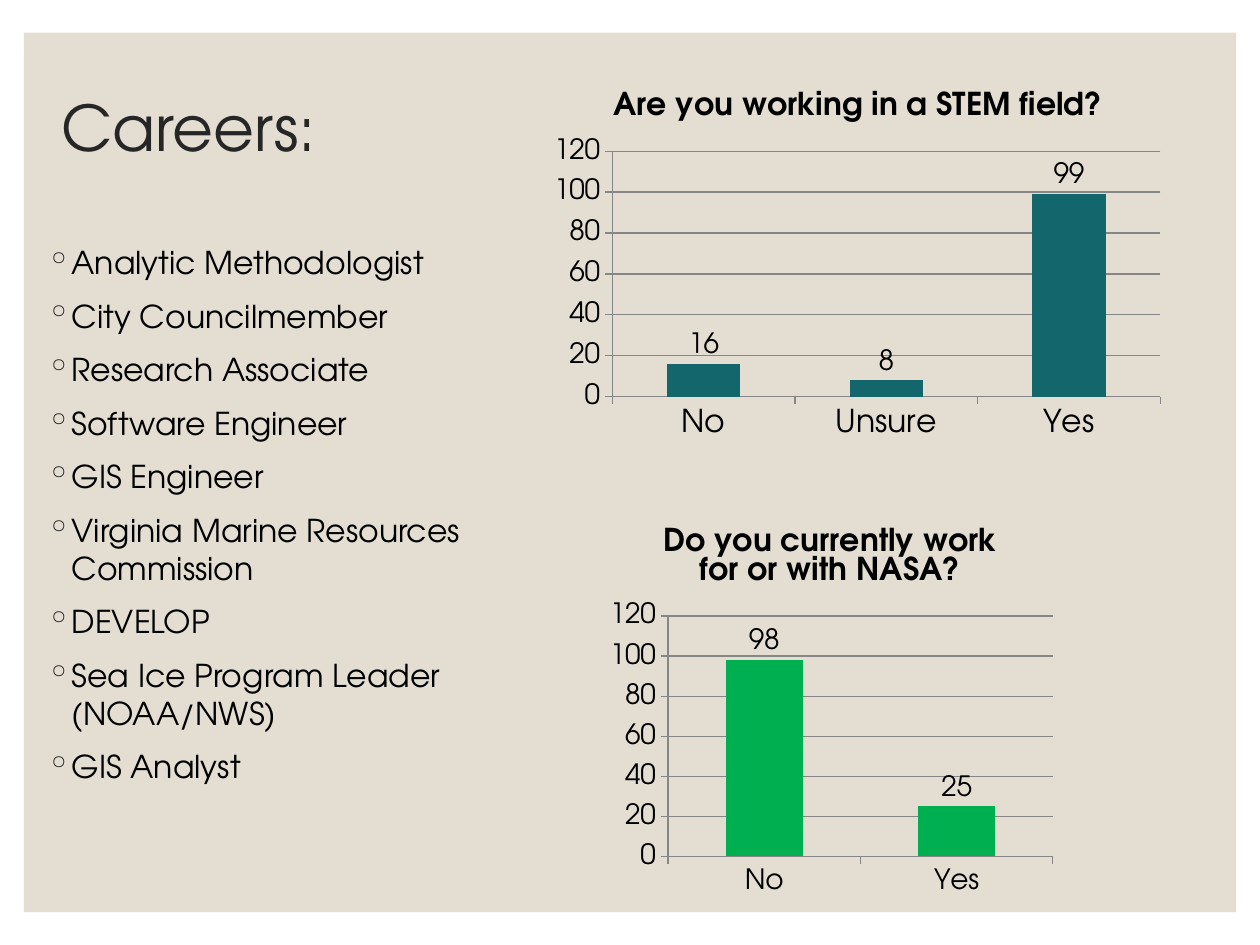
from lxml import etree
from pptx import Presentation
from pptx.chart.data import CategoryChartData
from pptx.dml.color import RGBColor
from pptx.enum.chart import XL_CHART_TYPE, XL_LABEL_POSITION, XL_TICK_MARK
from pptx.enum.shapes import MSO_SHAPE
from pptx.enum.text import MSO_ANCHOR
from pptx.oxml import parse_xml
from pptx.oxml.ns import nsdecls, qn
from pptx.util import Inches, Pt

FONT = "TeX Gyre Adventor"
BLACK = RGBColor(0x00, 0x00, 0x00)
CHARCOAL = RGBColor(0x26, 0x26, 0x26)
SAND = RGBColor(0xE3, 0xDE, 0xD1)
TEAL = RGBColor(0x13, 0x67, 0x6C)
GREEN = RGBColor(0x00, 0xB0, 0x50)
GRAY = RGBColor(0x86, 0x86, 0x86)

TITLE = "Careers:"
CAREERS = [
    "Analytic Methodologist",
    "City Councilmember",
    "Research Associate",
    "Software Engineer",
    "GIS Engineer",
    "Virginia Marine Resources Commission",
    "DEVELOP",
    "Sea Ice Program Leader (NOAA/NWS)",
    "GIS Analyst",
]
# "plot" holds the inner plot area as fractions of the chart: x, y, w, h
CHARTS = [
    {
        "title": "Are you working in a STEM field?",
        "box": (4.31, 0.54, 5, 3),
        "plot": (0.11, 0.22, 0.87, 0.65),
        "values": {"No": 16, "Unsure": 8, "Yes": 99},
        "color": TEAL,
        "category_size": 18,
    },
    {
        "title": "Do you currently work for or with NASA?",
        "box": (4.75, 4, 3.68, 3.18),
        "plot": (0.15, 0.28, 0.83, 0.6),
        "values": {"No": 98, "Yes": 25},
        "color": GREEN,
        "category_size": 16,
    },
]


def set_font(font, size, color=BLACK, bold=False):
    values = {"name": FONT, "size": Pt(size), "bold": bold}
    for name, value in values.items():
        setattr(font, name, value)
    font.color.rgb = color


def add_text(slide, box, lines, size, color, anchor=MSO_ANCHOR.TOP):
    frame = slide.shapes.add_textbox(*map(Inches, box)).text_frame
    frame.word_wrap = True
    frame.vertical_anchor = anchor
    frame.text = "\n".join(lines)
    for paragraph in frame.paragraphs:
        set_font(paragraph.runs[0].font, size, color)
    return frame.paragraphs


def add_bullet(paragraph):
    paragraph.space_before = Pt(9)
    properties = paragraph._p.get_or_add_pPr()
    properties.set("marL", str(Inches(0.2)))
    properties.set("indent", str(-Inches(0.2)))
    color = etree.SubElement(properties, qn("a:buClr"))
    etree.SubElement(color, qn("a:srgbClr"), val=str(CHARCOAL))
    etree.SubElement(properties, qn("a:buChar"), char="◦")


def place_plot(chart, fractions):
    """Fix the inner plot area, which python-pptx leaves automatic."""
    plot_area = chart._chartSpace.chart.plotArea
    for layout in plot_area.findall(qn("c:layout")):
        plot_area.remove(layout)
    modes = '<c:xMode val="edge"/><c:yMode val="edge"/>'
    sizes = "".join(f'<c:{name} val="{value}"/>' for name, value in zip("xywh", fractions))
    plot_area.insert(0, parse_xml(
        f'<c:layout {nsdecls("c")}><c:manualLayout><c:layoutTarget val="inner"/>'
        f"{modes}{sizes}</c:manualLayout></c:layout>"))


def add_column_chart(slide, content):
    data = CategoryChartData()
    data.categories = list(content["values"])
    data.add_series("Series 1", list(content["values"].values()))
    chart = slide.shapes.add_chart(
        XL_CHART_TYPE.COLUMN_CLUSTERED, *map(Inches, content["box"]), data).chart
    set_font(chart.font, 10)
    chart.has_legend = False
    chart.has_title = True
    title = chart.chart_title.text_frame
    title.text = content["title"]
    set_font(title.paragraphs[0].runs[0].font, 18, bold=True)
    chart.chart_title.include_in_layout = False

    for axis, size in ((chart.category_axis, content["category_size"]), (chart.value_axis, 16)):
        set_font(axis.tick_labels.font, size)
        axis.major_tick_mark = XL_TICK_MARK.OUTSIDE
        axis.format.line.color.rgb = GRAY
        axis.format.line.width = Pt(0.75)
    scale = {"minimum_scale": 0, "maximum_scale": 120, "major_unit": 20,
             "has_major_gridlines": True}
    for name, value in scale.items():
        setattr(chart.value_axis, name, value)
    gridline = chart.value_axis.major_gridlines.format.line
    gridline.color.rgb = GRAY
    gridline.width = Pt(0.75)

    plot = chart.plots[0]
    plot.gap_width = 150
    plot.vary_by_categories = False
    fill = plot.series[0].format.fill
    fill.solid()
    fill.fore_color.rgb = content["color"]
    labels = plot.series[0].data_labels
    labels.show_value = True
    labels.position = XL_LABEL_POSITION.OUTSIDE_END
    set_font(labels.font, 16)
    place_plot(chart, content["plot"])


def main():
    presentation = Presentation()
    presentation.slide_width = Inches(10)
    presentation.slide_height = Inches(7.5)
    slide = presentation.slides.add_slide(presentation.slide_layouts[6])

    panel = slide.shapes.add_shape(
        MSO_SHAPE.RECTANGLE, *map(Inches, (0.19, 0.26, 9.62, 6.98)))
    panel.shadow.inherit = False
    panel.fill.solid()
    panel.fill.fore_color.rgb = SAND
    panel.line.fill.background()

    heading = add_text(slide, (0.39, 0.39, 2.37, 1.3), [TITLE], 36, CHARCOAL, MSO_ANCHOR.MIDDLE)
    heading[0].line_spacing = 0.9
    for content in CHARTS:
        add_column_chart(slide, content)
    for paragraph in add_text(slide, (0.27, 1.88, 3.69, 5.24), CAREERS, 18, BLACK):
        add_bullet(paragraph)

    presentation.save("out.pptx")


if __name__ == "__main__":
    main()
